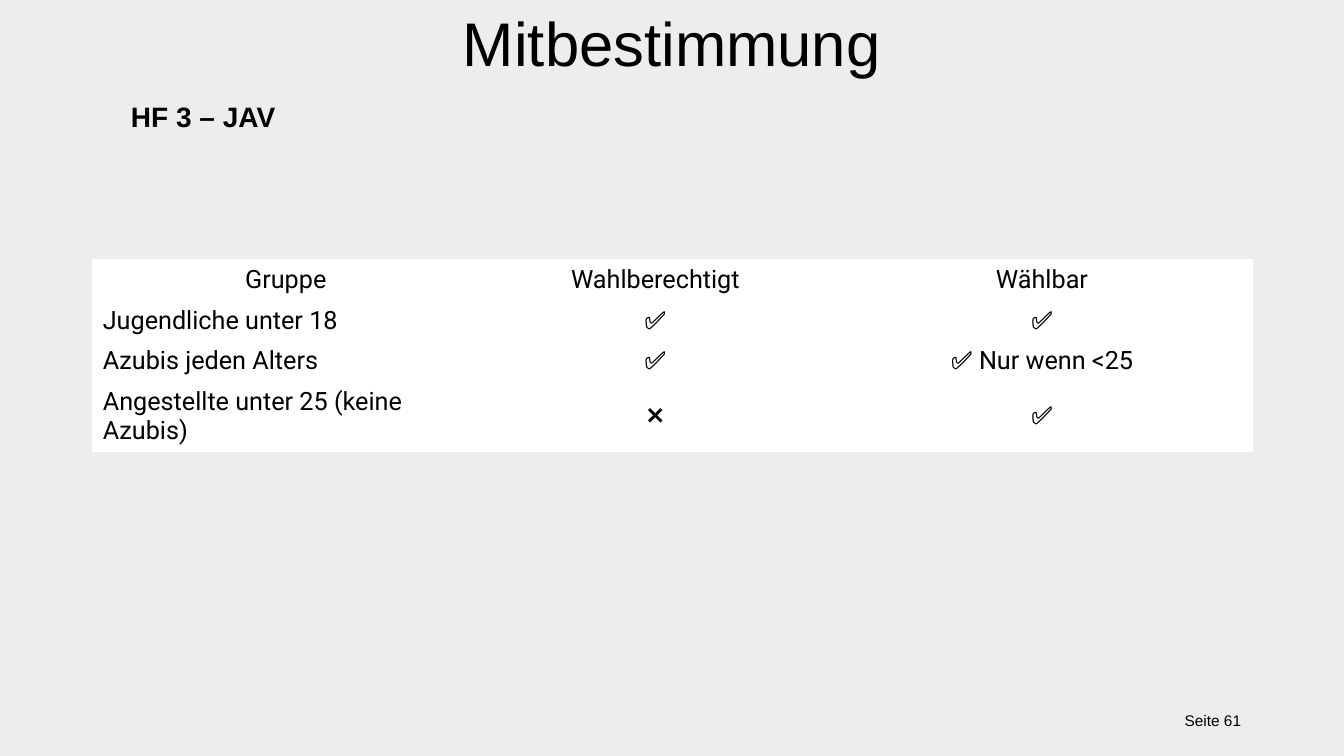
"""Build the slide on who may vote and stand in the JAV election."""
from dataclasses import dataclass

from pptx import Presentation
from pptx.dml.color import RGBColor
from pptx.enum.text import MSO_ANCHOR, MSO_AUTO_SIZE, PP_ALIGN
from pptx.util import Inches, Pt

LEFT, MID, RIGHT = PP_ALIGN.LEFT, PP_ALIGN.CENTER, PP_ALIGN.RIGHT
TOP, CENTER = MSO_ANCHOR.TOP, MSO_ANCHOR.MIDDLE
FIXED = MSO_AUTO_SIZE.NONE
TITLE_ONLY = 5
GREY, WHITE, BLACK = "EDEDED", "FFFFFF", "000000"

COLS = (3.83, 3.5, 4.17)
HIGHS = (0.4, 0.4, 0.4, 0.7)
ROWS = (
    ("Gruppe", "Wahlberechtigt", "Wählbar"),
    ("Jugendliche unter 18", "✅", "✅"),
    ("Azubis jeden Alters", "✅", "✅ Nur wenn <25"),
    ("Angestellte unter 25 (keine Azubis)", "❌", "✅"),
)


@dataclass(frozen=True)
class Label:
    """A line of text with its place and format."""
    text: str
    box: tuple[float, float, float, float]
    size: int
    align: PP_ALIGN = LEFT
    anchor: MSO_ANCHOR = TOP
    bold: bool = False


TITLE = Label("Mitbestimmung", (3.17, 0, 6.99, 0.84), 44, MID)
LABELS = (
    Label("HF 3 – JAV", (1.2, 0.94, 11.05, 0.44), 20, bold=True),
    Label("Seite 61", (11.2, 6.95, 1.21, 0.4), 11, RIGHT, CENTER),
)


def paint(fill, code: str) -> None:
    """Give a fill one solid colour."""
    fill.solid()
    fill.fore_color.rgb = RGBColor.from_string(code)


def write(frame, text: str, *, size: int, align: PP_ALIGN = LEFT,
          face: str = "Arial", bold: bool = False) -> None:
    """Put formatted text into a text frame."""
    frame.text = text
    par = frame.paragraphs[0]
    par.alignment = align
    font = par.runs[0].font
    font.size, font.name, font.bold = Pt(size), face, bold
    paint(font.fill, BLACK)


def place(shape, label: Label) -> None:
    """Move a text shape and fill it from its label."""
    shape.left, shape.top, shape.width, shape.height = map(Inches, label.box)
    frame = shape.text_frame
    frame.word_wrap = True
    frame.auto_size = FIXED
    frame.vertical_anchor = label.anchor
    write(frame, label.text, size=label.size, align=label.align,
          bold=label.bold)


def draw_table(slide) -> None:
    """Add the table of groups and their rights."""
    area = map(Inches, (0.92, 2.58, sum(COLS), sum(HIGHS)))
    table = slide.shapes.add_table(len(ROWS), len(COLS), *area).table
    table.first_row = table.horz_banding = False
    for col, width in zip(table.columns, COLS):
        col.width = Inches(width)
    for row, high in zip(table.rows, HIGHS):
        row.height = Inches(high)
    for r, texts in enumerate(ROWS):
        for c, text in enumerate(texts):
            cell = table.cell(r, c)
            cell.vertical_anchor = CENTER
            paint(cell.fill, WHITE)
            write(cell.text_frame, text, size=18, face="Roboto",
                  align=LEFT if r and not c else MID)


def main() -> None:
    """Build and save the deck."""
    deck = Presentation()
    deck.slide_width, deck.slide_height = Inches(13.33), Inches(7.5)
    slide = deck.slides.add_slide(deck.slide_layouts[TITLE_ONLY])
    paint(slide.background.fill, GREY)
    place(slide.shapes.title, TITLE)
    for label in LABELS:
        place(slide.shapes.add_textbox(*map(Inches, label.box)), label)
    draw_table(slide)
    deck.save("out.pptx")


if __name__ == "__main__":
    main()
